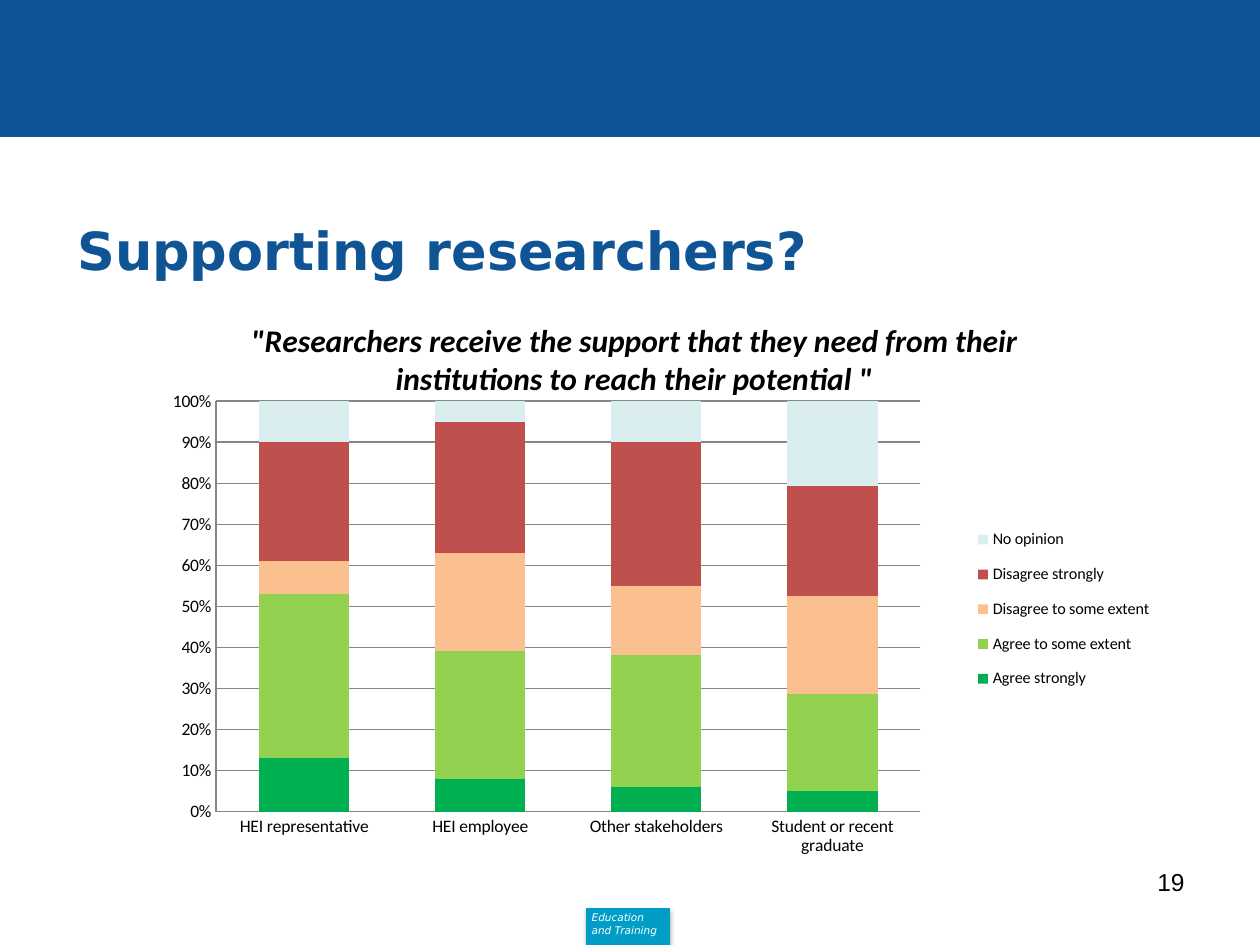
from dataclasses import dataclass

from lxml import etree
from pptx import Presentation
from pptx.chart.data import CategoryChartData
from pptx.dml.color import RGBColor
from pptx.enum.chart import XL_CHART_TYPE, XL_LEGEND_POSITION, XL_TICK_MARK
from pptx.enum.shapes import MSO_SHAPE
from pptx.enum.text import MSO_ANCHOR, PP_ALIGN
from pptx.oxml import parse_xml
from pptx.oxml.ns import nsdecls, qn
from pptx.util import Pt

STACKED = XL_CHART_TYPE.COLUMN_STACKED_100
RIGHT_SIDE = XL_LEGEND_POSITION.RIGHT
NO_TICK = XL_TICK_MARK.NONE
RECT = MSO_SHAPE.RECTANGLE
MIDDLE = MSO_ANCHOR.MIDDLE
LEFT, RIGHT = PP_ALIGN.LEFT, PP_ALIGN.RIGHT


@dataclass(frozen=True)
class Theme:
    blue: str = "0F5494"
    cyan: str = "009EC7"
    white: str = "FFFFFF"
    black: str = "000000"
    grid: str = "868686"
    head: str = "DejaVu Sans"
    body: str = "Arial"
    chart: str = "Calibri"
    title: float = 30
    quote: float = 18
    page: float = 14
    axis: float = 10
    legend: float = 9.2
    badge: float = 6


GROUPS = ["HEI representative", "HEI employee", "Other stakeholders",
          "Student or recent graduate"]
ANSWERS = [
    ("Agree strongly", "00B050", (13, 8, 6, 5)),
    ("Agree to some extent", "92D050", (40, 31, 32, 24)),
    ("Disagree to some extent", "FAC090", (8, 24, 17, 24)),
    ("Disagree strongly", "C0504D", (29, 32, 35, 27)),
    ("No opinion", "DAEDEF", (10, 5, 10, 21)),
]
QUOTE = ('"Researchers receive the support that they need from their '
         'institutions to reach their potential "')


class Deck:
    def __init__(self, theme, width, height):
        self.theme = theme
        self.file = Presentation()
        self.file.slide_width, self.file.slide_height = Pt(width), Pt(height)
        self.slide = self.file.slides.add_slide(self.file.slide_layouts[5])

    def style(self, font, face, size, color, bold=False, italic=False):
        font.name, font.size = face, Pt(size)
        font.bold, font.italic = bold, italic
        font.color.rgb = RGBColor.from_string(color)

    def label(self, frame, text, align, *style):
        frame.text = text
        frame.word_wrap = True
        for para in frame.paragraphs:
            para.alignment = align
            for run in para.runs:
                self.style(run.font, *style)

    def title(self, text, *box):
        shape = self.slide.shapes.title
        shape.left, shape.top, shape.width, shape.height = map(Pt, box)
        shape.text_frame.vertical_anchor = MIDDLE
        look = self.theme
        self.label(shape.text_frame, text, LEFT, look.head, look.title, look.blue, True)

    def text(self, text, box, align, *style):
        shape = self.slide.shapes.add_textbox(*map(Pt, box))
        self.label(shape.text_frame, text, align, *style)

    def block(self, color, *box):
        shape = self.slide.shapes.add_shape(RECT, *map(Pt, box))
        shape.shadow.inherit = False
        shape.fill.solid()
        shape.fill.fore_color.rgb = RGBColor.from_string(color)
        shape.line.color.rgb = RGBColor.from_string(color)
        shape.line.width = Pt(0.75)
        return shape

    def shade(self, shape):
        effects = shape._element.spPr.find(qn("a:effectLst"))
        effects.append(parse_xml(
            f'<a:outerShdw {nsdecls("a")} blurRad="{Pt(3.1)}" dist="{Pt(1.8)}" '
            f'dir="5400000" rotWithShape="0"><a:srgbClr val="{self.theme.black}">'
            '<a:alpha val="35000"/></a:srgbClr></a:outerShdw>'))

    def place(self, part, x, y, w, h, inner=False):
        old = part.find(qn("c:layout"))
        if old is not None:
            part.remove(old)
        layout = etree.Element(qn("c:layout"))
        manual = etree.SubElement(layout, qn("c:manualLayout"))
        pairs = [("layoutTarget", "inner")] if inner else []
        pairs += [("xMode", "edge"), ("yMode", "edge")]
        pairs += zip("xywh", map(str, (x, y, w, h)))
        for name, value in pairs:
            etree.SubElement(manual, qn("c:" + name)).set("val", value)
        mark = part.find(qn("c:legendPos"))
        if mark is None:
            part.insert(0, layout)
        else:
            mark.addnext(layout)

    def chart(self, title, groups, answers, *box):
        look = self.theme
        data = CategoryChartData(number_format="0")
        data.categories = groups
        for name, _, values in answers:
            data.add_series(name, values)
        chart = self.slide.shapes.add_chart(STACKED, *map(Pt, box), data).chart
        self.style(chart.font, look.chart, look.axis, look.black)
        self.label(chart.chart_title.text_frame, title, None,
                   look.chart, look.quote, look.black, True, True)
        chart.chart_title.include_in_layout = False

        plot = chart.plots[0]
        plot.gap_width, plot.overlap = 95, 100
        plot.vary_by_categories = False
        for series, (_, color, _) in zip(plot.series, answers):
            series.format.fill.solid()
            series.format.fill.fore_color.rgb = RGBColor.from_string(color)

        gray = RGBColor.from_string(look.grid)
        for axis in (chart.category_axis, chart.value_axis):
            axis.major_tick_mark = axis.minor_tick_mark = NO_TICK
            axis.format.line.color.rgb = gray
            self.style(axis.tick_labels.font, look.chart, look.axis, look.black)
        scale = chart.value_axis
        scale.minimum_scale, scale.maximum_scale, scale.major_unit = 0, 1, 0.1
        scale.tick_labels.number_format = "0%"
        scale.tick_labels.number_format_is_linked = False
        scale.major_gridlines.format.line.color.rgb = gray

        chart.has_legend = True
        legend = chart.legend
        legend.position = RIGHT_SIDE
        legend.include_in_layout = False
        self.style(legend.font, look.chart, look.legend, look.black)
        area = chart._chartSpace.chart.plotArea
        self.place(area, 0.12, 0.18, 0.64, 0.69, True)
        self.place(legend._element, 0.8, 0.37, 0.18, 0.32)

    def save(self):
        self.file.save("out.pptx")


def main():
    look = Theme()
    deck = Deck(look, 720, 540)
    deck.block(look.blue, 0, 0, 720, 78)
    deck.shade(deck.block(look.cyan, 335.5, 519, 47, 21.5))
    deck.text("Education \vand Training", (331, 517, 60, 19.5), LEFT,
              look.head, look.badge, look.white, False, True)
    deck.title("Supporting researchers?", 37, 106, 648, 73.5)
    deck.text("19", (516, 492, 168, 37.5), RIGHT, look.body, look.page, look.black)
    deck.chart(QUOTE, GROUPS, ANSWERS, 48, 168, 629, 340)
    deck.save()


if __name__ == "__main__":
    main()
